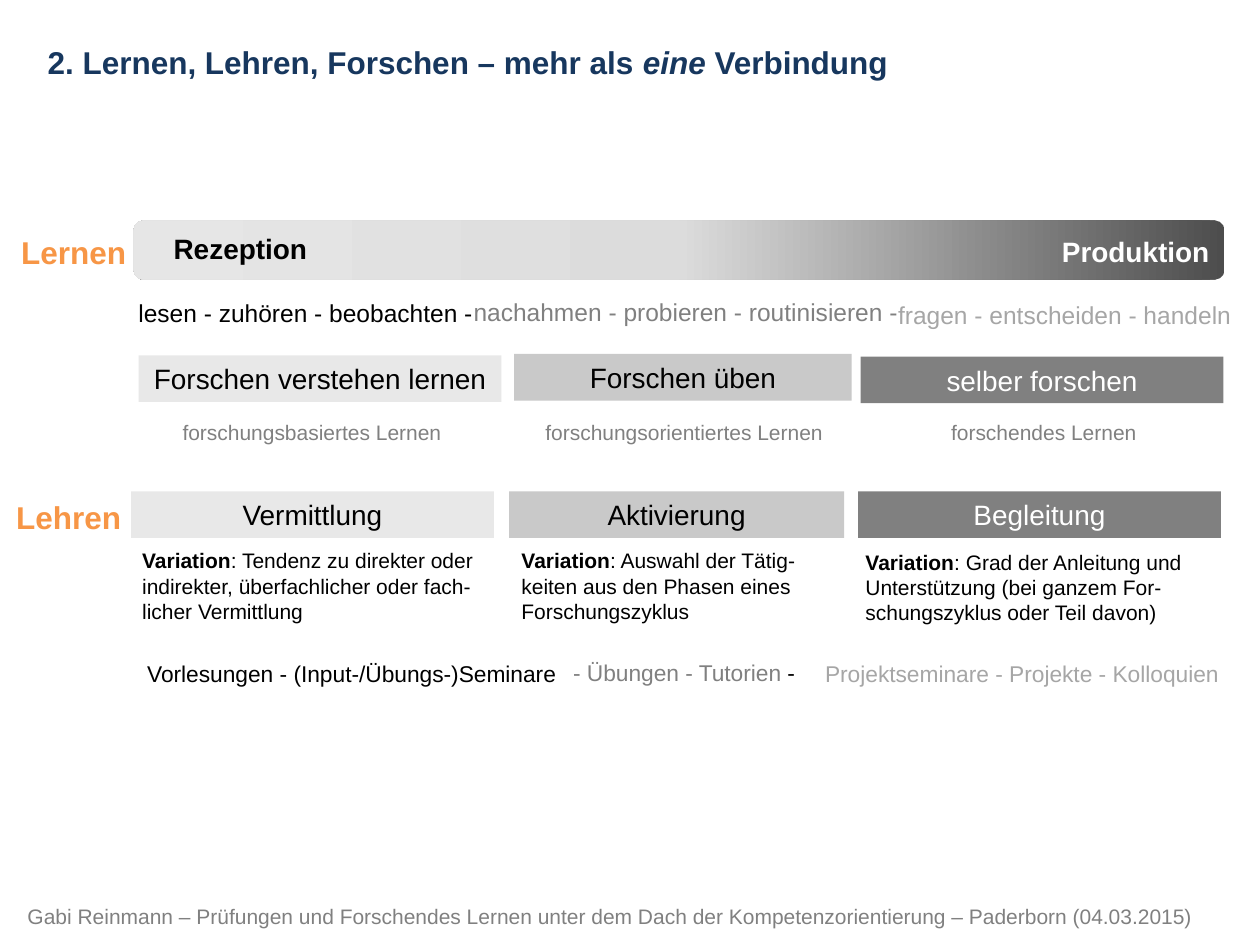
from copy import deepcopy
from pptx import Presentation
from pptx.dml.color import RGBColor
from pptx.enum.shapes import MSO_SHAPE
from pptx.enum.text import MSO_AUTO_SIZE, PP_ALIGN
from pptx.oxml import parse_xml
from pptx.oxml.ns import nsdecls
from pptx.util import Inches, Pt

RECT, ROUND = MSO_SHAPE.RECTANGLE, MSO_SHAPE.ROUNDED_RECTANGLE
GROW, CENTER = MSO_AUTO_SIZE.SHAPE_TO_FIT_TEXT, PP_ALIGN.CENTER
rgb = RGBColor.from_string

deck = Presentation()
deck.slide_width, deck.slide_height = Inches(10), Inches(7.5)
COL, ROW = deck.slide_width / 100, deck.slide_height / 75
slide = deck.slides.add_slide(deck.slide_layouts[6])

BLACK, WHITE, GRAY, PALE = "000000", "FFFFFF", "808080", "A6A6A6"
NAVY, ORANGE = "17375E", "F79646"
BOLD = {"bold": True}


def put(cells, runs, size, ink, wrap=True, fill=None):
    """Place text on the grid (left, top, width, height); a fill makes it a centred bar."""
    x, y, w, h = cells
    area = [int(v) for v in (x * COL, y * ROW, w * COL, h * ROW)]
    if fill:
        box = slide.shapes.add_shape(RECT, *area)
        box.shadow.inherit = False
        box.fill.solid()
        box.fill.fore_color.rgb = rgb(fill)
        box.line.fill.background()
    else:
        box = slide.shapes.add_textbox(*area)
    frame = box.text_frame
    frame.word_wrap, frame.auto_size = wrap, GROW
    para = frame.paragraphs[0]
    if fill:
        para.alignment = CENTER
    for text, look in runs:
        run = para.add_run()
        run.text = text
        style = {"name": "Arial", "size": Pt(size), **look}
        tone = style.pop("ink", ink)
        for key, value in style.items():
            setattr(run.font, key, value)
        run.font.color.rgb = rgb(tone)
    return para


# Scale from reception to production
bar = slide.shapes.add_shape(ROUND, int(10.6 * COL), int(17.5 * ROW),
                             int(86.6 * COL), int(4.7 * ROW))
bar.shadow.inherit = False
bar.line.fill.background()
bar.fill.gradient()
bar.fill.gradient_angle = 180
first = bar.fill.gradient_stops[0]._gs
first.addnext(deepcopy(first))
shades = [(0, "4D4D4D"), (0.5, "DCDCDC"), (1, "E6E6E6")]
for stop, (place, shade) in zip(bar.fill.gradient_stops, shades):
    stop.position = place
    stop.color.rgb = rgb(shade)

# Single lines: cells, text, size, ink
lines = [
    ((1.2, 71.2, 94.6, 3), "Gabi Reinmann – Prüfungen und Forschendes Lernen unter dem Dach "
     "der Kompetenzorientierung – Paderborn (04.03.2015)", 12, GRAY, {}),
    ((12.8, 17.9, 12.7, 3.7), "Rezeption", 16, BLACK, BOLD),
    ((83.3, 18.1, 13.9, 3.7), "Produktion", 16, WHITE, BOLD),
    ((0.7, 18, 10.4, 4), "Lernen", 18, ORANGE, BOLD),
    ((0.3, 39, 10.4, 4), "Lehren", 18, ORANGE, BOLD),
]
for cells, text, size, ink, look in lines:
    put(cells, [(text, look)], size, ink, wrap=False)

put((2.8, 2.9, 69.3, 4),
    [("2. Lernen, Lehren, Forschen – mehr als ", BOLD),
     ("eine", {"bold": True, "italic": True}), (" Verbindung", BOLD)],
    18, NAVY, wrap=False)

# Three stages: bar fill, bar ink, text ink
tones = [("E8E8E8", BLACK, BLACK), ("C9C9C9", BLACK, GRAY), (GRAY, WHITE, PALE)]

# Bars: left, top, width, text
bars = [
    [(11, 28.2, 28.8, "Forschen verstehen lernen"),
     (40.8, 28.1, 26.8, "Forschen üben"),
     (68.3, 28.3, 28.8, "selber forschen")],
    [(10.4, 39, 28.8, "Vermittlung"),
     (40.4, 39, 26.6, "Aktivierung"),
     (68.1, 39, 28.8, "Begleitung")],
]
for band in bars:
    for (x, y, w, text), (fill, ink, _) in zip(band, tones):
        put((x, y, w, 3.7), [(text, {})], 16, ink, fill=fill)

# Activities and formats: size, height, then left, top, width, runs
lists = [
    (14, 3.4, [(10, 23.2, 29.3, [("lesen - zuhören - beobachten -", {})]),
               (36.6, 23.1, 36.2, [("nachahmen - probieren - routinisieren -", {})]),
               (70.3, 23.3, 29.3, [("fragen - entscheiden - handeln", {})])]),
    (13, 3.2, [(10.7, 51.9, 35.4, [("Vorlesungen - (Input-/Übungs-)Seminare", {})]),
               (44.5, 51.8, 20.6, [("- Übungen - Tutorien ", {}), ("-", {"ink": BLACK})]),
               (64.5, 51.9, 34, [("Projektseminare - Projekte - Kolloquien", {})])]),
]
for size, h, band in lists:
    for (x, y, w, runs), (_, _, ink) in zip(band, tones):
        put((x, y, w, h), runs, size, ink)

notes = [
    (10.3, 43, 28.4, "Tendenz zu direkter oder indirekter, überfachlicher oder "
     "fach-licher Vermittlung"),
    (40.4, 43, 26.6, "Auswahl der Tätig-keiten aus den Phasen eines Forschungszyklus"),
    (67.7, 43.1, 28.9, "Grad der Anleitung und Unterstützung (bei ganzem "
     "For-schungszyklus oder Teil davon)"),
]
for x, y, w, text in notes:
    put((x, y, w, 7.1), [("Variation", BOLD), (": " + text, {})], 12, BLACK)

# Kinds of learning, set on tab stops
kinds = ["forschungsbasiertes Lernen", "forschungsorientiertes Lernen", "forschendes Lernen"]
para = put((10.3, 32.8, 86.9, 3), [("\t" + "\t".join(kinds), {})], 12, GRAY)
tabs = "".join(f'<a:tab pos="{int(x * COL)}" algn="l"/>' for x in (3.2, 32, 64.2))
para._p.get_or_add_pPr().append(parse_xml(f'<a:tabLst {nsdecls("a")}>{tabs}</a:tabLst>'))

deck.save("out.pptx")
